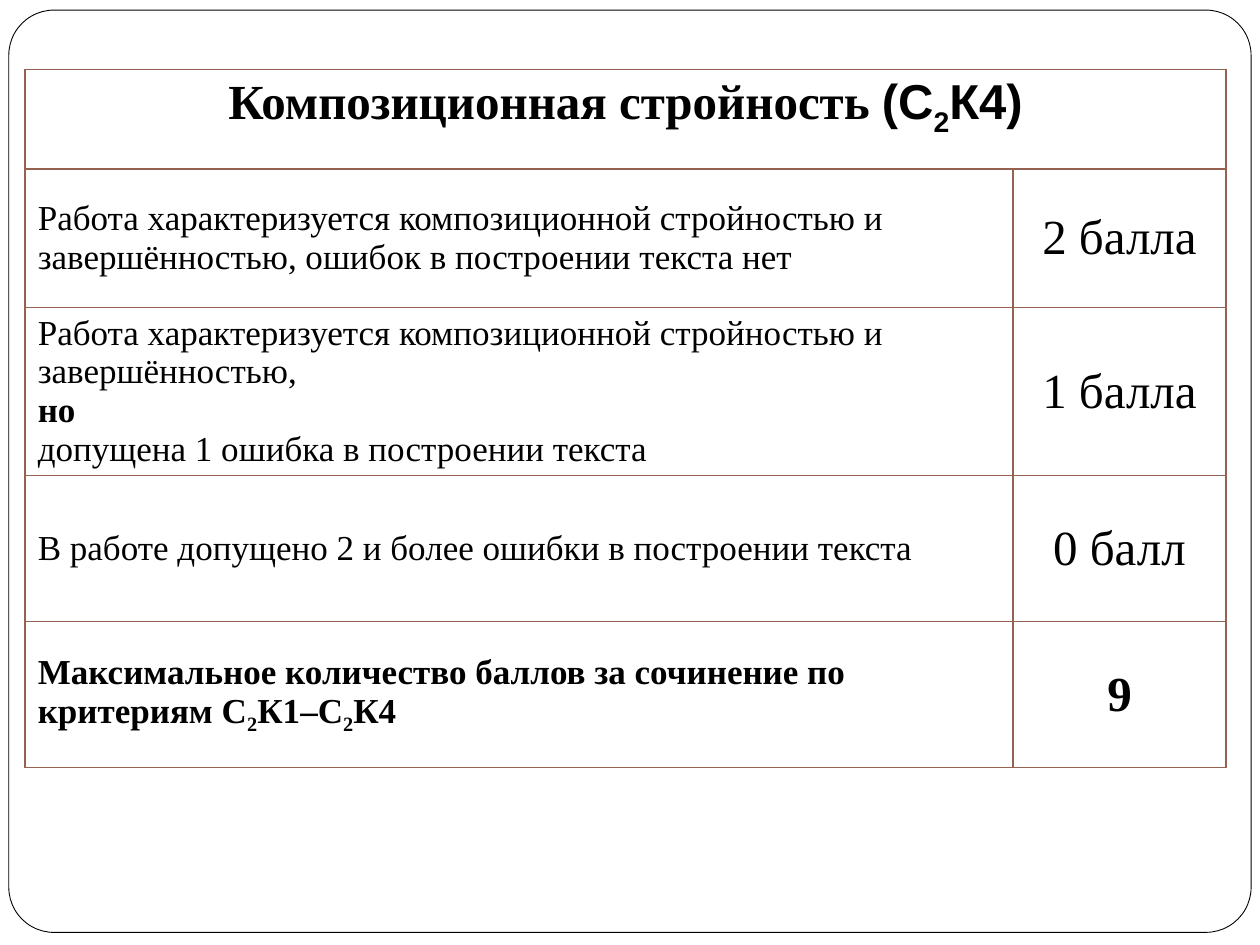
"""Build the slide with the scoring table for compositional coherence."""
from dataclasses import dataclass

from lxml.etree import SubElement
from pptx import Presentation
from pptx.dml.color import RGBColor
from pptx.enum.shapes import MSO_SHAPE
from pptx.enum.text import MSO_ANCHOR, PP_ALIGN
from pptx.oxml.ns import qn
from pptx.util import Inches, Pt

SERIF, SANS = "Times New Roman", "Arial"
BLACK, WHITE, BORDER = "000000", "FFFFFF", "956251"
COLUMNS = (7.84, 1.69)
ROWS = (0.79, 1.1, 1.16, 1.16, 1.16)


@dataclass
class Span:
    text: str
    bold: bool = False
    font: str = SERIF
    subscript: bool = False


@dataclass
class Criterion:
    paragraphs: list[list[Span]]
    score: Span


HEADER = [
    Span("Композиционная стройность ", True),
    Span("(С", True, SANS),
    Span("2", True, SANS, True),
    Span("К4)", True, SANS),
]
CRITERIA = [
    Criterion(
        [[Span("Работа характеризуется композиционной стройностью и "
               "завершённостью, ошибок в построении текста нет")]],
        Span("2 балла"),
    ),
    Criterion(
        [
            [Span("Работа характеризуется композиционной стройностью и завершённостью,")],
            [Span("но", True)],
            [Span("допущена 1 ошибка в построении текста")],
        ],
        Span("1 балла"),
    ),
    Criterion(
        [[Span("В работе допущено 2 и более ошибки в построении текста")]],
        Span("0 балл"),
    ),
    Criterion(
        [[
            Span("Максимальное количество баллов за сочинение по критериям С", True),
            Span("2", True, subscript=True),
            Span("К1–С", True),
            Span("2", True, subscript=True),
            Span("К4", True),
        ]],
        Span("9", True),
    ),
]


def rgb(color: str) -> RGBColor:
    return RGBColor.from_string(color)


def add_frame(s) -> None:
    sp = s.shapes.add_shape(MSO_SHAPE.ROUNDED_RECTANGLE, Inches(0.07), Inches(0.08),
                            Inches(9.86), Inches(7.32))
    sp.adjustments[0] = 0.049
    sp.shadow.inherit = False
    sp.fill.solid()
    sp.fill.fore_color.rgb = rgb(WHITE)
    sp.line.color.rgb = rgb(BLACK)
    sp.line.width = Pt(0.5)


def style_cell(cell) -> None:
    tcPr = cell._tc.get_or_add_tcPr()
    for side in ("a:lnL", "a:lnR", "a:lnT", "a:lnB"):
        ln = SubElement(tcPr, qn(side), w=str(Pt(1)))
        SubElement(SubElement(ln, qn("a:solidFill")), qn("a:srgbClr"), val=BORDER)
    cell.fill.background()


def set_space_before(p, percent: int) -> None:
    spacing = SubElement(p._p.get_or_add_pPr(), qn("a:spcBef"))
    SubElement(spacing, qn("a:spcPct"), val=str(percent * 1000))


def write_cell(cell, paragraphs: list[list[Span]], size: int,
               align: PP_ALIGN = PP_ALIGN.LEFT,
               anchor: MSO_ANCHOR = MSO_ANCHOR.MIDDLE) -> None:
    cell.vertical_anchor = anchor
    tf = cell.text_frame
    for i, spans in enumerate(paragraphs):
        p = tf.add_paragraph() if i else tf.paragraphs[0]
        p.alignment = align
        for span in spans:
            r = p.add_run()
            r.text = span.text
            r.font.name = span.font
            r.font.size = Pt(size)
            r.font.bold = span.bold
            r.font.color.rgb = rgb(BLACK)
            if span.subscript:
                r.font._element.set("baseline", "-25000")


def add_score_table(s) -> None:
    table = s.shapes.add_table(len(ROWS), len(COLUMNS), Inches(0.2), Inches(0.55),
                               Inches(sum(COLUMNS)), Inches(sum(ROWS))).table
    table.first_row = False
    table.horz_banding = False
    for column, width in zip(table.columns, COLUMNS):
        column.width = Inches(width)
    for row, height in zip(table.rows, ROWS):
        row.height = Inches(height)
    for cell in table.iter_cells():
        style_cell(cell)

    table.cell(0, 0).merge(table.cell(0, 1))
    write_cell(table.cell(0, 0), [HEADER], 28, PP_ALIGN.CENTER, MSO_ANCHOR.TOP)
    for i, criterion in enumerate(CRITERIA, start=1):
        write_cell(table.cell(i, 0), criterion.paragraphs, 20)
        score = table.cell(i, 1)
        write_cell(score, [[criterion.score]], 28, PP_ALIGN.CENTER)
        set_space_before(score.text_frame.paragraphs[0], 20)


def main() -> None:
    prs = Presentation()
    prs.slide_width, prs.slide_height = Inches(10), Inches(7.5)
    s = prs.slides.add_slide(prs.slide_layouts[6])
    add_frame(s)
    add_score_table(s)
    prs.save("out.pptx")


if __name__ == "__main__":
    main()
